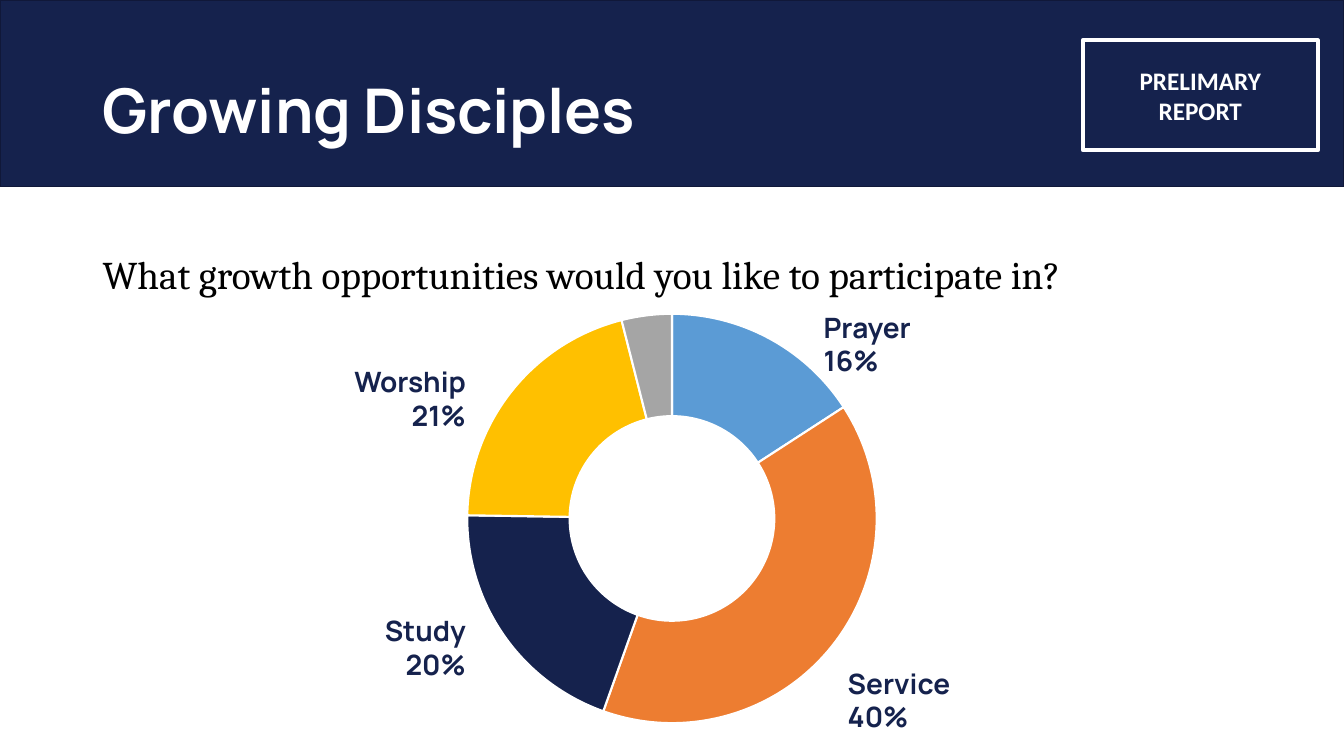
from lxml import etree
from pptx import Presentation
from pptx.chart.data import CategoryChartData
from pptx.dml.color import RGBColor
from pptx.enum import chart as ch, shapes, text
from pptx.oxml import ns
from pptx.util import Inches, Pt

NAVY, WHITE, BLACK = "15224D", "FFFFFF", "000000"
LEFT, RIGHT, MID = text.PP_ALIGN.LEFT, text.PP_ALIGN.RIGHT, text.PP_ALIGN.CENTER


def rgb(code):
    return RGBColor.from_string(code)


def write(shape, words, look, color, align=LEFT, gap=None, mid=False):
    """Fill a shape with one paragraph per line, all in the same look."""
    frame = shape.text_frame
    frame.word_wrap = True
    frame.vertical_anchor = text.MSO_ANCHOR.MIDDLE if mid else text.MSO_ANCHOR.TOP
    frame.text = words
    for par in frame.paragraphs:
        par.alignment, par.line_spacing = align, gap
        for key, val in look.items():
            setattr(par.font, key, val)
        par.font.color.rgb = rgb(color)


prs = Presentation()
prs.slide_width, prs.slide_height = Inches(13.33), Inches(7.5)
slide = prs.slides.add_slide(prs.slide_layouts[6])
items = slide.shapes

# Header band and stamp
rects = []
for box, fill, edge, width in [
    ((0, 0, 13.33, 1.85), NAVY, "101839", 1),
    ((10.74, 0.4, 2.33, 1.09), None, WHITE, 3),
]:
    rect = items.add_shape(shapes.MSO_SHAPE.RECTANGLE, *map(Inches, box))
    rect.shadow.inherit = False
    if fill:
        rect.fill.solid()
        rect.fill.fore_color.rgb = rgb(fill)
    else:
        rect.fill.background()
    rect.line.color.rgb = rgb(edge)
    rect.line.width = Pt(width)
    rects.append(rect)
band, stamp = rects
write(stamp, "PRELIMARY\nREPORT", dict(name="Calibri", size=Pt(18), bold=True),
      WHITE, MID, mid=True)

title = items.add_textbox(*map(Inches, (0.92, 0.4, 9.83, 1.45)))
write(title, "Growing Disciples", dict(name="Manrope", size=Pt(44), bold=True),
      WHITE, gap=0.9, mid=True)

# Doughnut
slices = [(16, "5B9BD5"), (40, "ED7D31"), (20, NAVY), (21, "FFC000"), (4, "A5A5A5")]
data = CategoryChartData()
data.categories = [str(n + 1) for n in range(len(slices))]
data.add_series("Series 1", [val for val, _ in slices])
chart = items.add_chart(ch.XL_CHART_TYPE.DOUGHNUT,
                        *map(Inches, (3.39, 2.96, 6.55, 4.37)), data).chart
chart.has_legend = chart.has_title = False
chart.font.size, chart.font.name = Pt(10), "Calibri"
chart.font.color.rgb = rgb(BLACK)
plot = chart.plots[0]
plot.vary_by_categories = False
for n, (_, color) in enumerate(slices):
    form = plot.series[0].points[n].format
    form.fill.solid()
    form.fill.fore_color.rgb = rgb(color)
    form.line.color.rgb = rgb(WHITE)
    form.line.width = Pt(1.5)

root = chart.element
root.find(".//" + ns.qn("c:holeSize")).set("val", "75")
area = root.find(".//" + ns.qn("c:plotArea"))
lay = area.find(ns.qn("c:layout"))
if lay is None:
    lay = etree.Element(ns.qn("c:layout"))
    area.insert(0, lay)
man = etree.SubElement(lay, ns.qn("c:manualLayout"))
for tag, val in [("layoutTarget", "inner"), ("xMode", "edge"), ("yMode", "edge"),
                 ("x", "0.19"), ("y", "0.035"), ("w", "0.62"), ("h", "0.93")]:
    etree.SubElement(man, ns.qn("c:" + tag)).set("val", val)

# Question and slice labels
ask = items.add_textbox(*map(Inches, (0.92, 1.97, 10.74, 0.93)))
write(ask, "What growth opportunities would you like to participate in?",
      dict(name="Cambria", size=Pt(28)), BLACK, gap=2.0)

for words, left, top, align in [
    ("Worship\n21%", 3.09, 3.57, RIGHT),
    ("Service\n40%", 8.31, 6.56, LEFT),
    ("Study\n20%", 3.09, 6.04, RIGHT),
    ("Prayer\n16%", 8.07, 3.03, LEFT),
]:
    label = items.add_textbox(*map(Inches, (left, top, 1.63, 0.77)))
    write(label, words, dict(name="Manrope", size=Pt(20), bold=True), NAVY, align)

prs.save("out.pptx")
